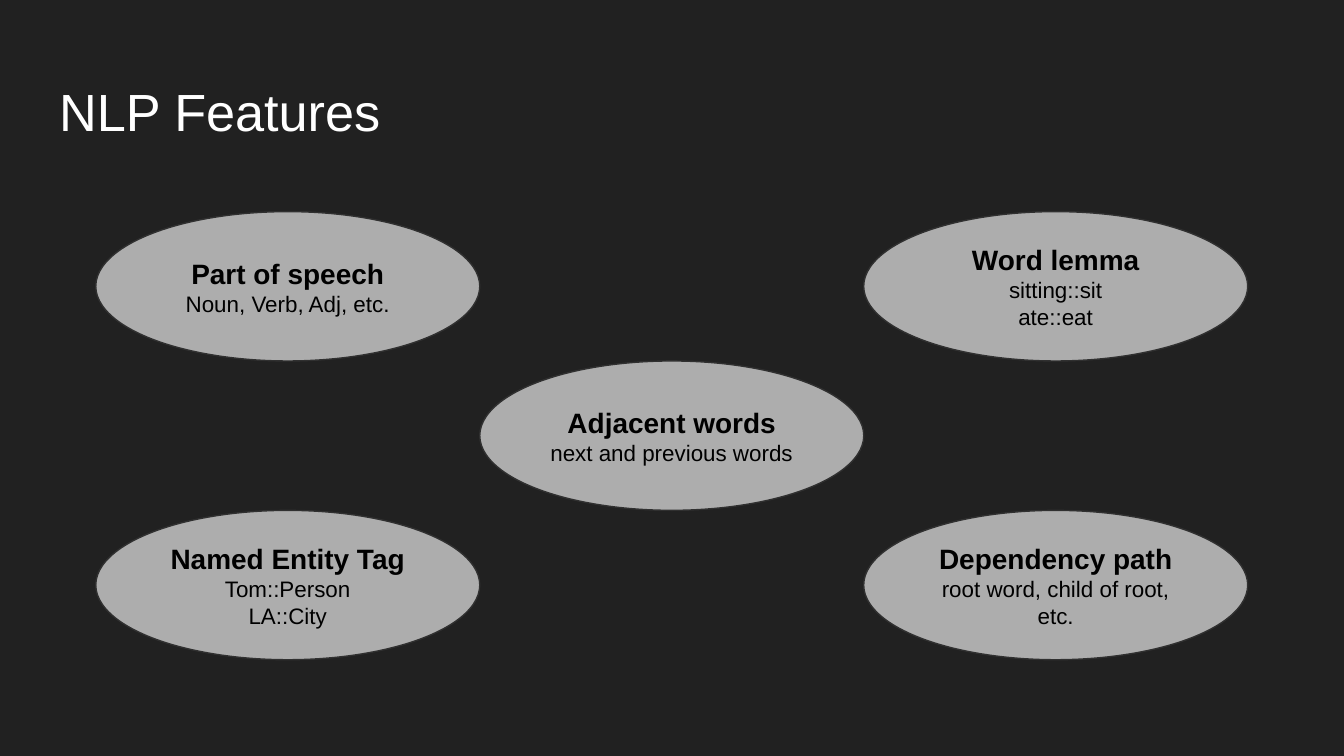
from pptx import Presentation
from pptx.dml.color import RGBColor
from pptx.enum.shapes import MSO_SHAPE
from pptx.enum.text import MSO_ANCHOR, PP_ALIGN
from pptx.util import Cm, Pt

ELLIPSE = MSO_SHAPE.OVAL
MIDDLE = MSO_ANCHOR.MIDDLE
CENTER = PP_ALIGN.CENTER

BACKGROUND = RGBColor(0x21, 0x21, 0x21)
WHITE = RGBColor(0xFF, 0xFF, 0xFF)
BLACK = RGBColor(0x00, 0x00, 0x00)
BUBBLE_FILL = RGBColor(0xAD, 0xAD, 0xAD)
BUBBLE_LINE = RGBColor(0x30, 0x30, 0x30)

FONT = "Arial"
INSET = Cm(0.25)

# (column, row) in a 3 x 3 grid, heading, detail lines
FEATURES = [
    (2, 2, "Dependency path", ["root word, child of root, etc."]),
    (0, 2, "Named Entity Tag", ["Tom::Person", "LA::City"]),
    (1, 1, "Adjacent words", ["next and previous words"]),
    (2, 0, "Word lemma", ["sitting::sit", "ate::eat"]),
    (0, 0, "Part of speech", ["Noun, Verb, Adj, etc."]),
]


def prepare_frame(frame):
    frame.word_wrap = True
    frame.margin_left = frame.margin_right = INSET
    frame.margin_top = frame.margin_bottom = INSET


def add_run(paragraph, text, size, color, bold=False):
    run = paragraph.add_run()
    run.text = text
    run.font.name = FONT
    run.font.size = Pt(size)
    run.font.bold = bold
    run.font.color.rgb = color


def add_title(slide, text, left, top, width, height):
    title = slide.shapes.add_textbox(left, top, width, height)
    prepare_frame(title.text_frame)
    add_run(title.text_frame.paragraphs[0], text, 28, WHITE)


def add_bubble(slide, heading, details, left, top, width, height):
    bubble = slide.shapes.add_shape(ELLIPSE, left, top, width, height)
    bubble.shadow.inherit = False
    bubble.fill.solid()
    bubble.fill.fore_color.rgb = BUBBLE_FILL
    bubble.line.color.rgb = BUBBLE_LINE
    bubble.line.width = Pt(0.75)

    frame = bubble.text_frame
    prepare_frame(frame)
    frame.vertical_anchor = MIDDLE
    add_run(frame.paragraphs[0], heading, 15, BLACK, bold=True)
    for detail in details:
        add_run(frame.add_paragraph(), detail, 12, BLACK)
    for paragraph in frame.paragraphs:
        paragraph.alignment = CENTER


def add_feature_grid(slide, left, top, width, height):
    """Place the bubbles in a 3 x 3 grid whose cells touch."""
    cell_width, cell_height = width // 3, height // 3
    for column, row, heading, details in FEATURES:
        add_bubble(slide, heading, details,
                   left + column * cell_width, top + row * cell_height,
                   cell_width, cell_height)


def main():
    deck = Presentation()
    deck.slide_width, deck.slide_height = Cm(25.4), Cm(14.29)
    slide = deck.slides.add_slide(deck.slide_layouts[6])
    slide.background.fill.solid()
    slide.background.fill.fore_color.rgb = BACKGROUND

    add_title(slide, "NLP Features", Cm(0.87), Cm(1.24), Cm(23.67), Cm(1.6))
    add_feature_grid(slide, Cm(1.81), Cm(4), Cm(21.77), Cm(8.47))
    deck.save("out.pptx")


if __name__ == "__main__":
    main()
